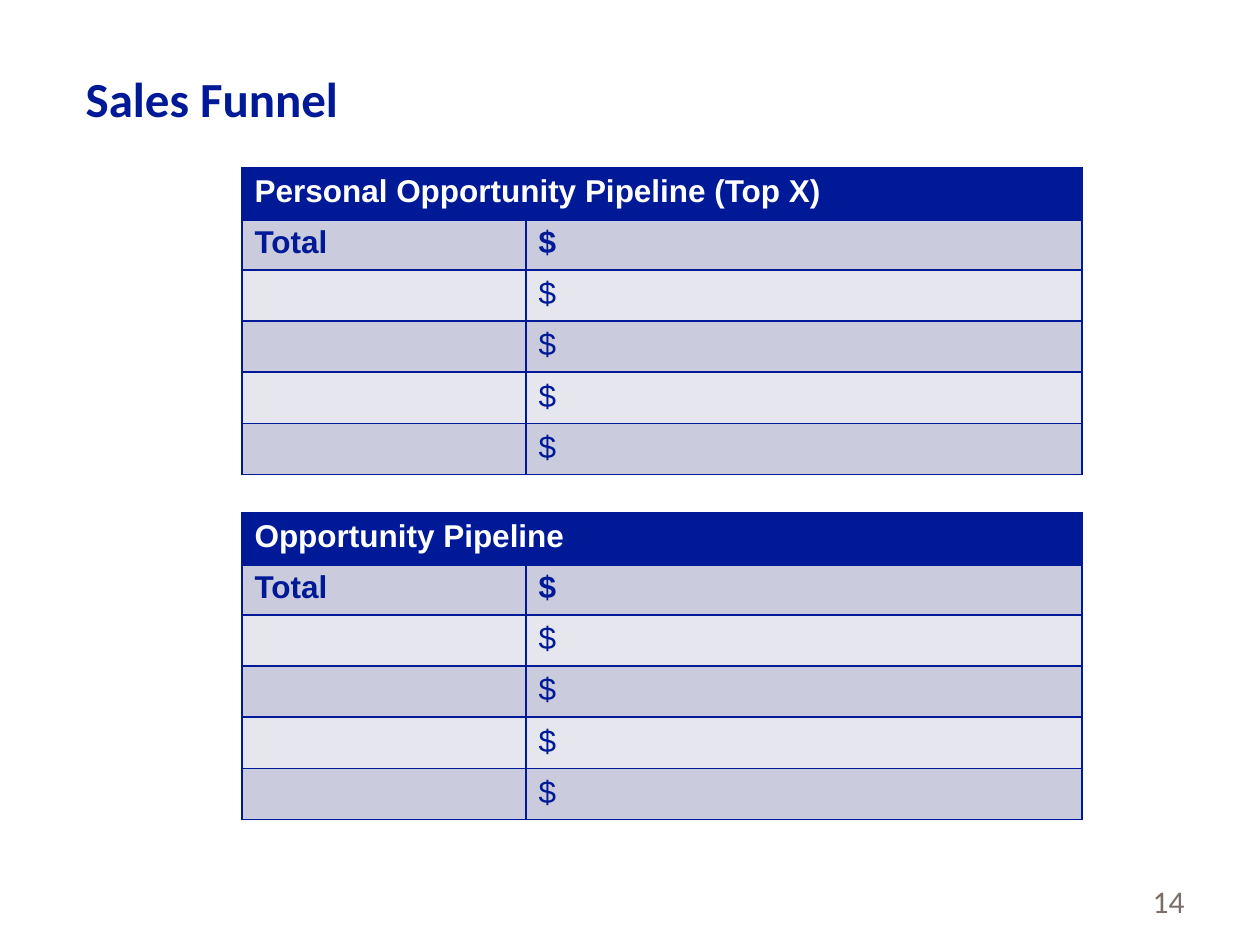
from lxml import etree
from pptx import Presentation
from pptx.dml.color import RGBColor
from pptx.enum.text import MSO_ANCHOR, PP_ALIGN
from pptx.oxml.ns import qn
from pptx.util import Emu, Pt

MIDDLE = MSO_ANCHOR.MIDDLE
LEFT, RIGHT = PP_ALIGN.LEFT, PP_ALIGN.RIGHT
PX = 914400 / 126
COLORS = {
    "navy": "001996",
    "white": "FFFFFF",
    "band_dark": "CACBDC",
    "band_light": "E6E7EE",
    "gray": "7A6E67",
}
COLUMN_WIDTHS = [284, 556]
ROW_HEIGHT = 51
TABLE_LEFT = 242
PIPELINES = [
    (168, "Personal Opportunity Pipeline (Top X)"),
    (513, "Opportunity Pipeline"),
]
BODY_ROWS = [("Total", "$")] + [("", "$")] * 4


def write(tf, text, color, align=LEFT, **font):
    p = tf.paragraphs[0]
    p.alignment = align
    r = p.add_run()
    r.text = text
    r.font.color.rgb = RGBColor.from_string(COLORS[color])
    for name, value in font.items():
        setattr(r.font, name, value)


def style_cell(cell, fill, top, bottom):
    """Fill the cell and outline it in navy; top and bottom are line widths in points."""
    tcPr = cell._tc.get_or_add_tcPr()
    for side, width in (("L", 1), ("R", 1), ("T", top), ("B", bottom)):
        ln = etree.SubElement(tcPr, qn(f"a:ln{side}"), w=str(Pt(width)))
        solid = etree.SubElement(ln, qn("a:solidFill"))
        etree.SubElement(solid, qn("a:srgbClr"), val=COLORS["navy"])
    cell.fill.solid()
    cell.fill.fore_color.rgb = RGBColor.from_string(COLORS[fill])


prs = Presentation()
prs.slide_width, prs.slide_height = Emu(round(1260 * PX)), Emu(round(945 * PX))
s = prs.slides.add_slide(prs.slide_layouts[5])

# Title
title = s.shapes.title
title.left, title.top, title.width, title.height = [
    Emu(round(v * PX)) for v in (73, 38, 1134, 120)
]
title.text_frame.vertical_anchor = MIDDLE
write(title.text_frame, "Sales Funnel", "navy", name="Calibri", size=Pt(28), bold=True)

# Pipeline tables
for top, heading in PIPELINES:
    rows = [(heading, "")] + BODY_ROWS
    box = (TABLE_LEFT, top, sum(COLUMN_WIDTHS), ROW_HEIGHT * len(rows))
    table = s.shapes.add_table(
        len(rows), len(COLUMN_WIDTHS), *[Emu(round(v * PX)) for v in box]
    ).table
    for column, width in zip(table.columns, COLUMN_WIDTHS):
        column.width = Emu(round(width * PX))
    table.cell(0, 0).merge(table.cell(0, 1))
    for i, row in enumerate(rows):
        if i == 0:
            fill, color = "navy", "white"
        else:
            fill, color = ("band_dark" if i % 2 else "band_light"), "navy"
        for j, text in enumerate(row):
            cell = table.cell(i, j)
            style_cell(cell, fill, top=3 if i == 1 else 1, bottom=3 if i == 0 else 1)
            if text:
                write(cell.text_frame, text, color, name="Arial", size=Pt(18), bold=i < 2)

# Page number
box = s.shapes.add_textbox(*[Emu(round(v * PX)) for v in (903, 876, 294, 50)])
tf = box.text_frame
tf.word_wrap = True
tf.vertical_anchor = MIDDLE
write(tf, "14", "gray", RIGHT, name="Calibri", size=Pt(18))

prs.save("out.pptx")
